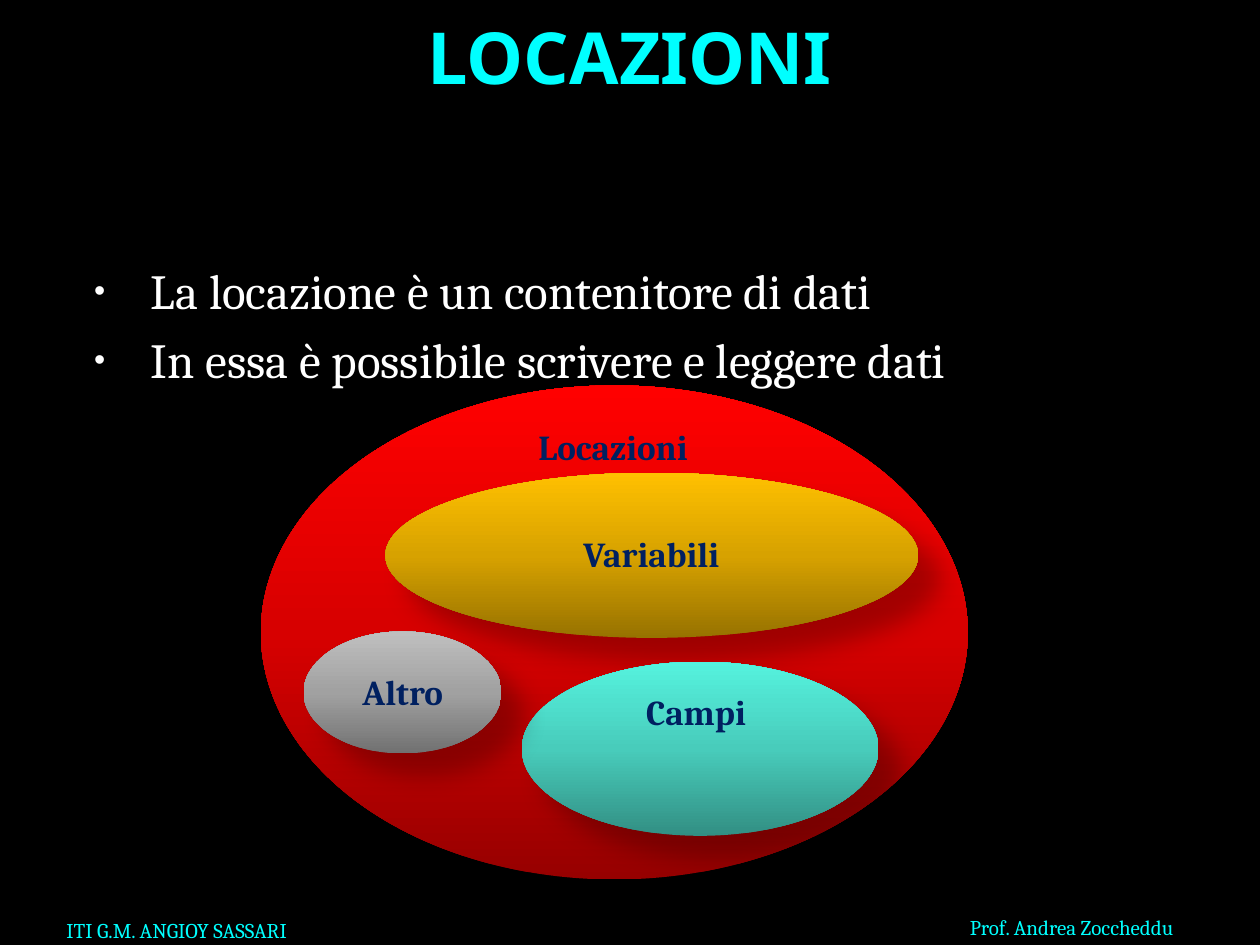
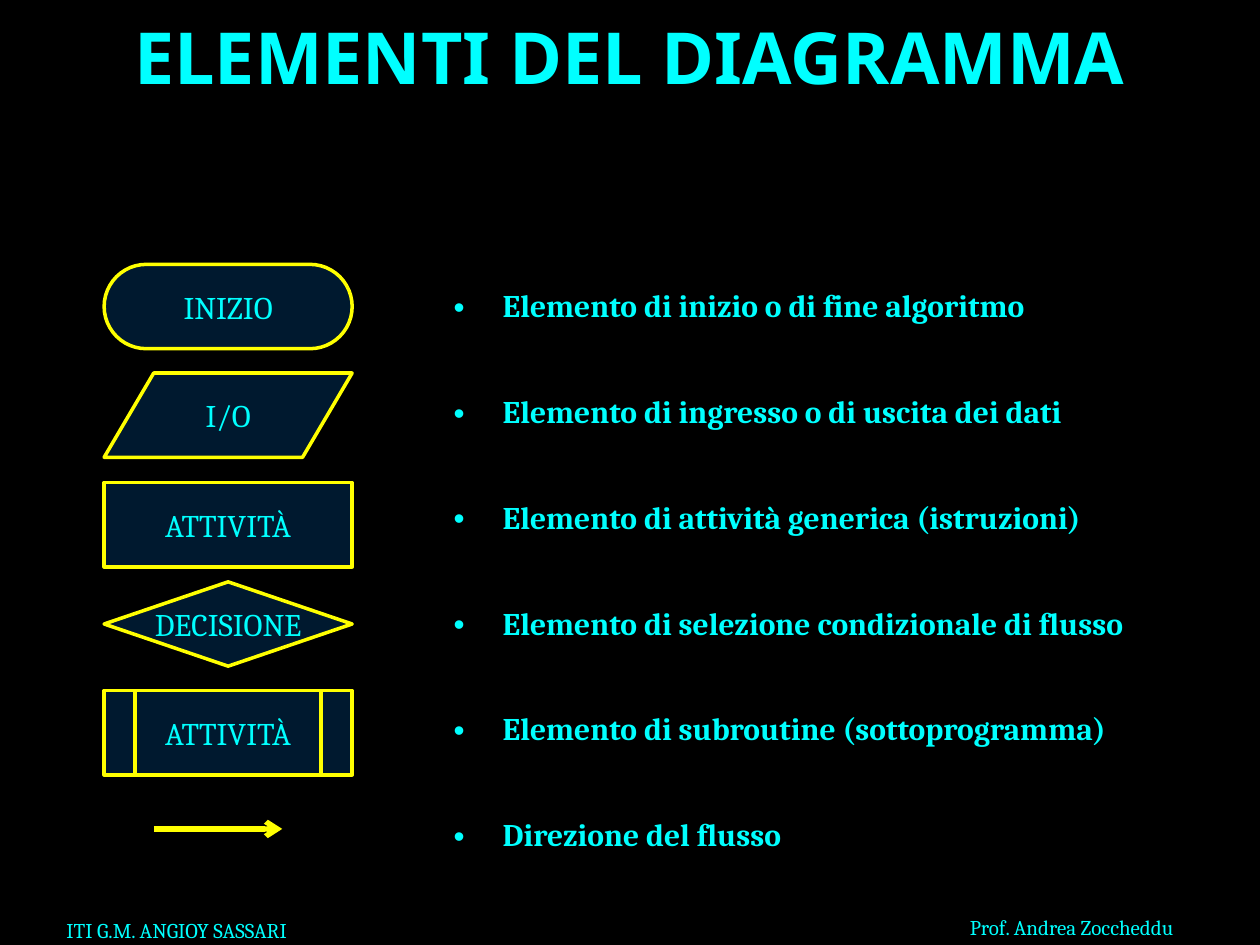
"""Build two slides on data locations and flowchart elements."""
import copy

import lxml.etree
import pptx
import pptx.dml.color
import pptx.enum.shapes
import pptx.enum.text
import pptx.oxml.ns
import pptx.util

Cm = pptx.util.Cm
Pt = pptx.util.Pt
RGBColor = pptx.dml.color.RGBColor
SHAPE = pptx.enum.shapes.MSO_SHAPE
ALIGN = pptx.enum.text.PP_ALIGN
ANCHOR = pptx.enum.text.MSO_ANCHOR
qn = pptx.oxml.ns.qn
SubElement = lxml.etree.SubElement

BLACK = RGBColor(0x00, 0x00, 0x00)
WHITE = RGBColor(0xFF, 0xFF, 0xFF)
CYAN = RGBColor(0x00, 0xFF, 0xFF)
YELLOW = RGBColor(0xFF, 0xFF, 0x00)
NAVY = RGBColor(0x00, 0x20, 0x60)
MIDNIGHT = RGBColor(0x00, 0x19, 0x2F)
REDS = RGBColor(0x97, 0x00, 0x00), RGBColor(0xD7, 0x00, 0x00), RGBColor(0xFF, 0x00, 0x00)
GOLDS = RGBColor(0x97, 0x72, 0x00), RGBColor(0xD7, 0xA2, 0x00), RGBColor(0xFF, 0xC0, 0x00)
TEALS = RGBColor(0x32, 0x8F, 0x83), RGBColor(0x48, 0xCC, 0xBB), RGBColor(0x55, 0xF2, 0xDE)
GREYS = RGBColor(0x71, 0x71, 0x71), RGBColor(0xA1, 0xA1, 0xA1), RGBColor(0xBF, 0xBF, 0xBF)


def write(tf, *lines, size=18, color=CYAN, font="Cambria", bold=False, align=ALIGN.LEFT,
          anchor=ANCHOR.TOP, wrap=True, indent=None, bullet_size=100, bullet_color=CYAN, gap=0):
    """Fill a text frame with one paragraph per line."""
    tf.word_wrap = wrap
    tf.vertical_anchor = anchor
    for i, line in enumerate(lines):
        p = tf.add_paragraph() if i else tf.paragraphs[0]
        p.alignment = align
        if i:
            p.space_before = Pt(gap)
        if indent:
            pPr = p._p.get_or_add_pPr()
            pPr.set("marL", str(indent[0]))
            pPr.set("indent", str(-indent[1]))
            clr = SubElement(pPr, qn("a:buClr"))
            SubElement(clr, qn("a:srgbClr"), val=str(bullet_color))
            SubElement(pPr, qn("a:buSzPct"), val=str(bullet_size * 1000))
            SubElement(pPr, qn("a:buFont"), typeface="Arial")
            SubElement(pPr, qn("a:buChar"), char="•")
        r = p.add_run()
        r.text = line
        r.font.name = font
        r.font.size = Pt(size)
        r.font.bold = bold
        r.font.color.rgb = color


prs = pptx.Presentation()
prs.slide_width, prs.slide_height = Cm(25.4), Cm(19.05)
bg = prs.slide_master.background.fill
bg.solid()
bg.fore_color.rgb = BLACK

slides = []
for title in ("LOCAZIONI", "ELEMENTI DEL DIAGRAMMA"):
    s = prs.slides.add_slide(prs.slide_layouts[6])
    sp = s.shapes.add_textbox(Cm(19.3), Cm(18.31), Cm(5.21), Cm(0.76))
    write(sp.text_frame, "Prof. Andrea Zoccheddu", size=12, wrap=False)
    sp = s.shapes.add_textbox(Cm(1.09), Cm(18.11), Cm(8.05), Cm(1.02))
    write(sp.text_frame, "ITI G.M. ANGIOY SASSARI", size=12, anchor=ANCHOR.BOTTOM)
    sp = s.shapes.add_textbox(Cm(1.27), Cm(0.13), Cm(22.86), Cm(3.18))
    write(sp.text_frame, title, size=41, font="Noto Sans", bold=True, align=ALIGN.CENTER)
    slides.append(s)
locations, elements = slides

sp = locations.shapes.add_textbox(Cm(1.27), Cm(5.13), Cm(22.86), Cm(12.4))
write(sp.text_frame, "La locazione è un contenitore di dati",
      "In essa è possibile scrivere e leggere dati", size=28, color=WHITE,
      indent=(Cm(1.52), Cm(1.14)), bullet_size=65, bullet_color=WHITE, gap=6)

sets = [
    ("Locazioni", REDS, (5.26, 7.77, 14.25, 9.96), (12.36, 9.0)),
    ("Variabili", GOLDS, (7.77, 9.53, 10.74, 3.33), (13.13, 11.16)),
    ("Campi", TEALS, (10.52, 13.34, 7.19, 3.51), (14.03, 14.35)),
    ("Altro", GREYS, (6.12, 12.73, 3.99, 2.46), (8.12, 13.95)),
]
for name, shades, box, (x, y) in sets:
    sp = locations.shapes.add_shape(SHAPE.OVAL, *map(Cm, box))
    sp.line.fill.background()
    sp.fill.gradient()
    sp.fill.gradient_angle = 90
    stops = sp._element.spPr.find(".//" + qn("a:gsLst"))
    stops.insert(1, copy.deepcopy(stops[0]))
    for i, stop in enumerate(sp.fill.gradient_stops):
        stop.position = i / 2
        stop.color.rgb = shades[i]
    sp.shadow.inherit = False
    shadow = SubElement(sp._element.spPr.find(qn("a:effectLst")), qn("a:outerShdw"),
                        blurRad=str(Pt(15)), dist=str(Pt(18)), dir="2700000",
                        algn="tl", rotWithShape="0")
    clr = SubElement(shadow, qn("a:srgbClr"), val=str(BLACK))
    SubElement(clr, qn("a:alpha"), val="26000")
    sp = locations.shapes.add_textbox(Cm(x - 2), Cm(y - 0.6), Cm(4), Cm(1.2))
    write(sp.text_frame, name, size=20, color=NAVY, bold=True,
          align=ALIGN.CENTER, anchor=ANCHOR.MIDDLE)

meanings = [
    "Elemento di inizio o di fine algoritmo",
    "Elemento di ingresso o di uscita dei dati",
    "Elemento di attività generica (istruzioni)",
    "Elemento di selezione condizionale di flusso",
    "Elemento di subroutine (sottoprogramma)",
    "Direzione del flusso",
]
table = elements.shapes.add_table(len(meanings), 1, Cm(8.89), Cm(5.13), Cm(15.24), Cm(12.8)).table
table.first_row = table.horz_banding = False
table._tbl.tblPr.find(qn("a:tableStyleId")).text = "{2D5ABB26-0587-4C30-8999-92F81FD0307C}"
for i, meaning in enumerate(meanings):
    cell = table.cell(i, 0)
    cell.fill.background()
    cell.vertical_anchor = ANCHOR.MIDDLE
    write(cell.text_frame, meaning, bold=True, indent=(Cm(0.99), Cm(0.99)))
    cell.vertical_anchor = ANCHOR.MIDDLE

symbols = [
    ("INIZIO", SHAPE.ROUNDED_RECTANGLE, 5.33),
    ("I/O", SHAPE.FLOWCHART_DATA, 7.52),
    ("ATTIVITÀ", SHAPE.RECTANGLE, 9.73),
    ("DECISIONE", SHAPE.DIAMOND, 11.73),
    ("ATTIVITÀ", SHAPE.FLOWCHART_PREDEFINED_PROCESS, 13.92),
]
for name, kind, top in symbols:
    sp = elements.shapes.add_shape(kind, Cm(2.1), Cm(top), Cm(5), Cm(1.7))
    sp.shadow.inherit = False
    sp.fill.solid()
    sp.fill.fore_color.rgb = MIDNIGHT
    sp.line.color.rgb = YELLOW
    sp.line.width = Pt(2)
    if kind == SHAPE.ROUNDED_RECTANGLE:
        sp.adjustments[0] = 0.5
    tf = sp.text_frame
    if kind == SHAPE.DIAMOND:
        tf.margin_left = tf.margin_right = tf.margin_top = tf.margin_bottom = 0
    write(tf, name, align=ALIGN.CENTER, anchor=ANCHOR.MIDDLE, wrap=kind != SHAPE.DIAMOND)

arrow = elements.shapes.add_connector(pptx.enum.shapes.MSO_CONNECTOR.STRAIGHT,
                                      Cm(3.1), Cm(16.71), Cm(5.69), Cm(16.71))
arrow.line.color.rgb = YELLOW
arrow.line.width = Pt(3)
SubElement(arrow.line._get_or_add_ln(), qn("a:tailEnd"), type="arrow")
SubElement(arrow._element.spPr, qn("a:effectLst"))

prs.save("out.pptx")
